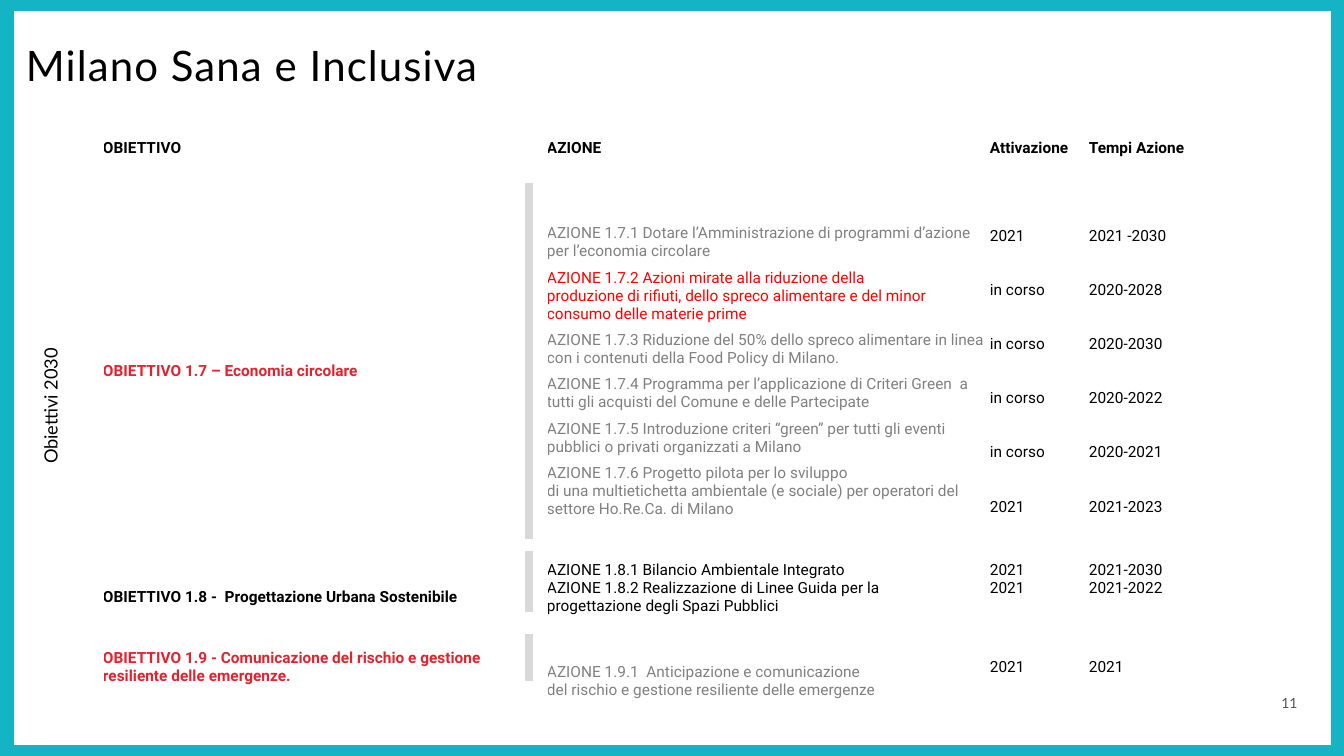
from dataclasses import dataclass

from lxml.etree import SubElement
from pptx import Presentation
from pptx.dml.color import RGBColor
from pptx.enum.shapes import MSO_CONNECTOR, MSO_SHAPE
from pptx.enum.text import MSO_ANCHOR as Anchor, PP_ALIGN as Align
from pptx.oxml.ns import qn
from pptx.util import Emu, Pt

SLIDE_WIDTH, SLIDE_HEIGHT = 1344, 756
EMU_PER_PX = 12192000 / SLIDE_WIDTH


@dataclass(frozen=True)
class Theme:
    teal: str = "15B4C5"
    white: str = "FFFFFF"
    black: str = "000000"
    grey: str = "808080"
    red: str = "FF0000"
    crimson: str = "E2232F"
    bar: str = "D9D9D9"
    number: str = "535353"
    heading_font: str = "Lato"
    table_font: str = "Roboto"
    title_size: float = 30
    side_size: float = 13
    table_size: float = 11
    number_size: float = 10


THEME = Theme()


@dataclass(frozen=True)
class Style:
    size: float = THEME.table_size
    color: str = THEME.black
    font: str = THEME.table_font
    bold: bool = False


BODY = Style()
STRONG = Style(bold=True)
ALERT = Style(color=THEME.crimson, bold=True)
MUTED = Style(color=THEME.grey)
URGENT = Style(color=THEME.red)


@dataclass(frozen=True)
class Line:
    text: str
    style: Style = BODY


@dataclass(frozen=True)
class Entry:
    """Content of one table cell; gap is the space between its paragraphs."""
    lines: tuple[Line, ...] = ()
    gap: float = 0
    anchor: Anchor = Anchor.MIDDLE
    top: int = 0


@dataclass(frozen=True)
class Label:
    text: str
    place: tuple[int, int, int, int]
    style: Style
    align: Align = Align.LEFT
    rotation: int = 0
    spacing: float = 0
    wrap: bool = True


def entry(*texts: str, style: Style = BODY, **options) -> Entry:
    return Entry(tuple(Line(text, style) for text in texts), **options)


TABLE_LEFT, TABLE_TOP = 103, 115
COLUMN_WIDTHS = (387, 57, 443, 99, 108)
ROW_HEIGHTS = (67, 379, 72, 69)
ACTION_GAP, DATE_GAP = 6, 25.8
EMPTY = Entry()

ROWS = (
    (
        entry("OBIETTIVO", style=STRONG),
        EMPTY,
        entry("AZIONE", style=STRONG),
        entry("Attivazione", style=STRONG),
        entry("Tempi Azione", style=STRONG),
    ),
    (
        entry("OBIETTIVO 1.7 – Economia circolare", style=ALERT),
        EMPTY,
        Entry((
            Line("AZIONE 1.7.1 Dotare l’Amministrazione di programmi d’azione "
                 "per l’economia circolare", MUTED),
            Line("AZIONE 1.7.2 Azioni mirate alla riduzione della\n"
                 "produzione di rifiuti, dello spreco alimentare e del minor "
                 "consumo delle materie prime", URGENT),
            Line("AZIONE 1.7.3 Riduzione del 50% dello spreco alimentare in linea "
                 "con i contenuti della Food Policy di Milano.", MUTED),
            Line("AZIONE 1.7.4 Programma per l’applicazione di Criteri Green  a "
                 "tutti gli acquisti del Comune e delle Partecipate", MUTED),
            Line("AZIONE 1.7.5 Introduzione criteri “green” per tutti gli "
                 "eventi pubblici o privati organizzati a Milano", MUTED),
            Line("AZIONE 1.7.6 Progetto pilota per lo sviluppo\n"
                 "di una multietichetta ambientale (e sociale) per operatori del "
                 "settore Ho.Re.Ca. di Milano", MUTED),
        ), gap=ACTION_GAP),
        entry("2021", *["in corso"] * 4, "2021", gap=DATE_GAP),
        entry("2021 -2030", "2020-2028", "2020-2030", "2020-2022",
              "2020-2021", "2021-2023", gap=DATE_GAP),
    ),
    (
        entry("OBIETTIVO 1.8 -  Progettazione Urbana Sostenibile", style=STRONG),
        EMPTY,
        entry("AZIONE 1.8.1 Bilancio Ambientale Integrato",
              "AZIONE 1.8.2 Realizzazione di Linee Guida per la\n"
              "progettazione degli Spazi Pubblici", anchor=Anchor.TOP),
        entry("2021", "2021", anchor=Anchor.TOP),
        entry("2021-2030", "2021-2022", anchor=Anchor.TOP),
    ),
    (
        entry("OBIETTIVO 1.9 - Comunicazione del rischio e gestione "
              "resiliente delle emergenze.", style=ALERT),
        EMPTY,
        entry("AZIONE 1.9.1  Anticipazione e comunicazione\n"
              "del rischio e gestione resiliente delle emergenze",
              style=MUTED, top=28),
        entry("2021"),
        entry("2021"),
    ),
)

BAR_X = 529
BAR_SPANS = ((183, 539), (551, 612), (634, 681))

LABELS = (
    Label("11", (1281, 695, 17, 17),
          Style(THEME.number_size, THEME.number, THEME.heading_font),
          Align.CENTER, wrap=False),
    Label("Obiettivi 2030", (-209, 395, 519, 22),
          Style(THEME.side_size, font=THEME.heading_font),
          Align.CENTER, rotation=270),
    Label("Milano Sana e Inclusiva", (26, 40, 495, 50),
          Style(THEME.title_size, font=THEME.heading_font), spacing=0.8),
)


def px(length: int) -> Emu:
    return Emu(round(length * EMU_PER_PX))


def rgb(color: str) -> RGBColor:
    return RGBColor.from_string(color)


def apply(target, **values) -> None:
    for name, value in values.items():
        setattr(target, name, value)


def write(para, text: str, style: Style, spacing: float = 0) -> None:
    para.text = text
    for span in para.runs:
        apply(span.font, name=style.font, size=Pt(style.size), bold=style.bold)
        span.font.color.rgb = rgb(style.color)
        if spacing:
            span.font._element.set("spc", str(round(spacing * 100)))
    for line_break in para._p.findall(qn("a:br")):
        SubElement(line_break, qn("a:rPr"), sz=str(round(style.size * 100)))


def fill_cell(cell, content: Entry) -> None:
    cell.fill.background()
    apply(cell, margin_left=0, margin_right=0, margin_bottom=0,
          margin_top=px(content.top), vertical_anchor=content.anchor)
    frame = cell.text_frame
    for index, line in enumerate(content.lines):
        para = frame.add_paragraph() if index else frame.paragraphs[0]
        write(para, line.text, line.style)
        if index and content.gap:
            para.space_before = Pt(content.gap)


def add_border(page) -> None:
    border = page.shapes.add_shape(MSO_SHAPE.RECTANGLE, px(1), px(-2), px(1343), px(760))
    border.shadow.inherit = False
    border.fill.background()
    border.line.color.rgb = rgb(THEME.teal)
    border.line.width = Pt(19)


def add_goals_table(page) -> None:
    table = page.shapes.add_table(
        len(ROWS), len(COLUMN_WIDTHS), px(TABLE_LEFT), px(TABLE_TOP),
        px(sum(COLUMN_WIDTHS)), px(sum(ROW_HEIGHTS))).table
    apply(table, first_row=False, horz_banding=False)
    for column, width in zip(table.columns, COLUMN_WIDTHS):
        column.width = px(width)
    for row, height, entries in zip(table.rows, ROW_HEIGHTS, ROWS):
        row.height = px(height)
        for cell, content in zip(row.cells, entries):
            fill_cell(cell, content)


def add_bar(page, top: int, bottom: int) -> None:
    bar = page.shapes.add_connector(
        MSO_CONNECTOR.STRAIGHT, px(BAR_X), px(top), px(BAR_X), px(bottom))
    bar.line.color.rgb = rgb(THEME.bar)
    bar.line.width = Pt(6)
    SubElement(bar._element.spPr, qn("a:effectLst"))


def add_label(page, label: Label) -> None:
    box = page.shapes.add_textbox(*map(px, label.place))
    box.rotation = label.rotation
    apply(box.text_frame, word_wrap=label.wrap, margin_left=0, margin_right=0,
          margin_top=0, margin_bottom=0)
    para = box.text_frame.paragraphs[0]
    para.alignment = label.align
    write(para, label.text, label.style, label.spacing)


def main() -> None:
    deck = Presentation()
    apply(deck, slide_width=px(SLIDE_WIDTH), slide_height=px(SLIDE_HEIGHT))
    page = deck.slides.add_slide(deck.slide_layouts[6])
    add_border(page)
    add_goals_table(page)
    for top, bottom in BAR_SPANS:
        add_bar(page, top, bottom)
    for label in LABELS:
        add_label(page, label)
    deck.save("out.pptx")


if __name__ == "__main__":
    main()
